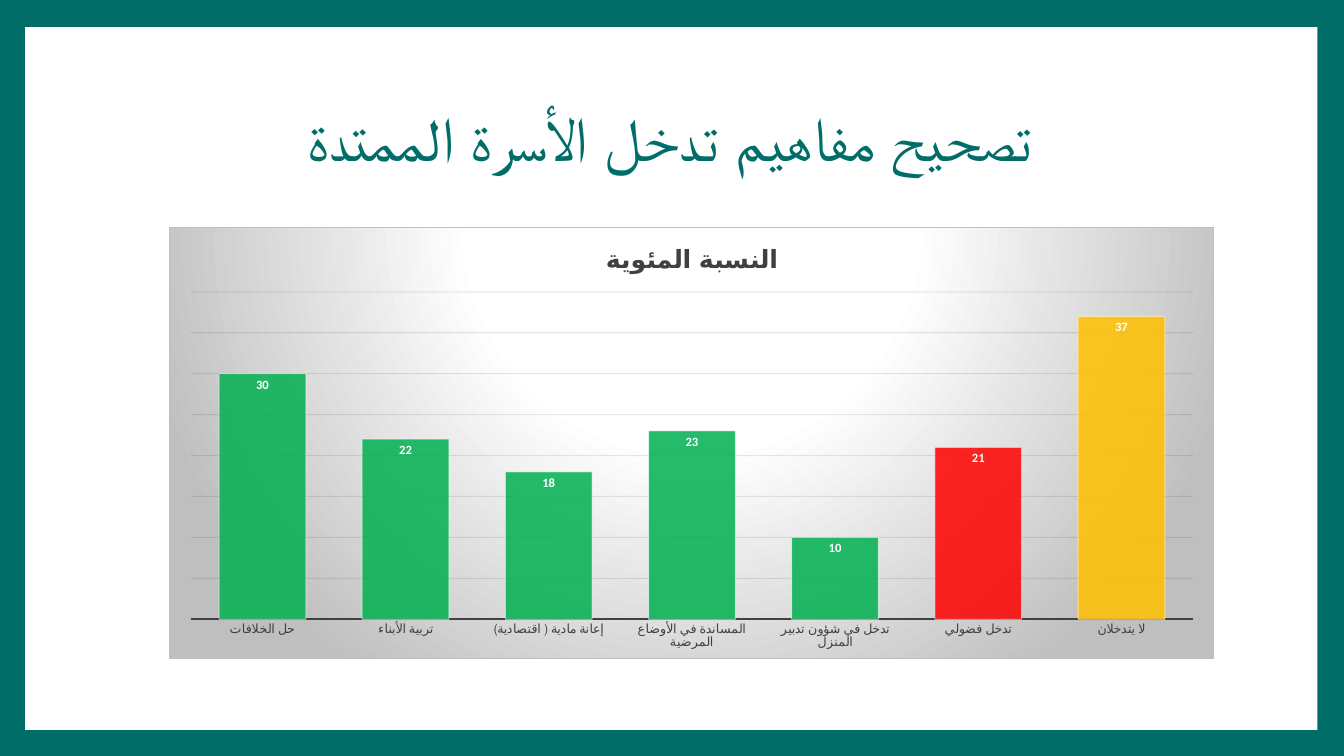
from dataclasses import dataclass
from typing import Any

from lxml import etree
from pptx import Presentation
from pptx.chart.data import CategoryChartData
from pptx.dml.color import RGBColor
from pptx.enum.chart import XL_CHART_TYPE, XL_LABEL_POSITION, XL_TICK_MARK
from pptx.enum.shapes import MSO_SHAPE
from pptx.enum.text import MSO_ANCHOR, PP_ALIGN
from pptx.oxml import parse_xml
from pptx.oxml.ns import qn
from pptx.util import Pt

COLUMNS = XL_CHART_TYPE.COLUMN_CLUSTERED
INSIDE_END = XL_LABEL_POSITION.INSIDE_END
NO_TICK = XL_TICK_MARK.NONE
RECTANGLE = MSO_SHAPE.RECTANGLE
MIDDLE = MSO_ANCHOR.MIDDLE
CENTER = PP_ALIGN.CENTER

COLORS = {
    "teal": "006D68", "white": "FFFFFF", "black": "000000",
    "dark": "404040", "grid": "0D0D0D", "silver": "BFBFBF",
    "green": "00B050", "red": "FF0000", "amber": "FFC000", "blue": "0989B1",
}
A_NS = "http://schemas.openxmlformats.org/drawingml/2006/main"
C_NS = "http://schemas.openxmlformats.org/drawingml/2006/chart"
NS = {"a": A_NS, "c": C_NS}
FILL = "c:spPr/a:solidFill/a:srgbClr"
LINE = "c:spPr/a:ln/a:solidFill/a:srgbClr"

HEADING = "تصحيح مفاهيم تدخل الأسرة الممتدة"
PERCENTAGE = "النسبة المئوية"


@dataclass(frozen=True)
class Intervention:
    label: str
    percent: int
    color: str = "green"


INTERVENTIONS = [
    Intervention("حل الخلافات", 30),
    Intervention("تربية الأبناء", 22),
    Intervention("إعانة مادية ( اقتصادية)", 18),
    Intervention("المساندة في الأوضاع المرضية", 23),
    Intervention("تدخل في شؤون تدبير المنزل", 10),
    Intervention("تدخل فضولي", 21, "red"),
    Intervention("لا يتدخلان", 37, "amber"),
]


def rgb(name: str) -> RGBColor:
    return RGBColor.from_string(COLORS[name])


def apply(target: Any, values: dict[str, Any]) -> None:
    for name, value in values.items():
        setattr(target, name, value)


def style_font(font: Any, color: str, size: float, bold: bool = False,
               name: str = "Calibri") -> None:
    apply(font, {"size": Pt(size), "bold": bold, "name": name})
    font.fill.solid()
    font.fill.fore_color.rgb = rgb(color)


def paint(fill: Any, color: str) -> None:
    fill.solid()
    fill.fore_color.rgb = rgb(color)


def paint_line(line: Any, color: str, width: float) -> None:
    paint(line.fill, color)
    line.width = Pt(width)


def set_opacity(element: Any, where: str, percent: int) -> None:
    color = element.find(where, NS)
    etree.SubElement(color, qn("a:alpha"), val=str(percent * 1000))


def style_column(bar_format: Any, color: str) -> None:
    paint(bar_format.fill, color)
    paint_line(bar_format.line, "white", 0.75)
    set_opacity(bar_format.element, FILL, 85)
    set_opacity(bar_format.element, LINE, 50)


def add_heading(slide: Any) -> None:
    box = slide.shapes.add_textbox(Pt(90), Pt(48), Pt(777.6), Pt(106.5))
    apply(box.text_frame, {"word_wrap": True, "vertical_anchor": MIDDLE})
    paragraph = box.text_frame.paragraphs[0]
    apply(paragraph, {"alignment": CENTER, "line_spacing": 0.9})
    run = paragraph.add_run()
    run.text = HEADING
    style_font(run.font, "teal", 44, name="Arial")
    # Right-to-left direction and the Arabic typeface
    box.element.find(".//a:pPr", NS).set("rtl", "1")
    etree.SubElement(box.element.find(".//a:rPr", NS), qn("a:cs"), typeface="Arial")


def add_backdrop(chart: Any) -> None:
    stops = "".join(
        f'<a:gs pos="{place * 1000}"><a:srgbClr val="{COLORS[color]}"/></a:gs>'
        for place, color in ((0, "white"), (39, "white"), (100, "silver")))
    backdrop = parse_xml(
        f'<c:spPr xmlns:c="{C_NS}" xmlns:a="{A_NS}"><a:gradFill><a:gsLst>{stops}</a:gsLst>'
        '<a:path path="circle"><a:fillToRect l="50000" t="-80000" r="50000" b="180000"/>'
        '</a:path></a:gradFill><a:ln w="9525"><a:solidFill>'
        f'<a:srgbClr val="{COLORS["silver"]}"/></a:solidFill></a:ln></c:spPr>')
    chart.element.find(qn("c:chart")).addnext(backdrop)


def place_plot(chart: Any, **fractions: float) -> None:
    plot_area = chart.element.find("c:chart/c:plotArea", NS)
    for old in plot_area.findall(qn("c:layout")):
        plot_area.remove(old)
    layout = etree.Element(qn("c:layout"))
    manual = etree.SubElement(layout, qn("c:manualLayout"))
    settings = {"layoutTarget": "inner", "xMode": "edge", "yMode": "edge", **fractions}
    for tag, value in settings.items():
        etree.SubElement(manual, qn(f"c:{tag}"), val=str(value))
    plot_area.insert(0, layout)


def add_percentage_chart(slide: Any) -> None:
    data = CategoryChartData()
    data.categories = [item.label for item in INTERVENTIONS]
    data.add_series(PERCENTAGE, [item.percent for item in INTERVENTIONS])
    chart = slide.shapes.add_chart(
        COLUMNS, Pt(121), Pt(162), Pt(746.5), Pt(308.5), data).chart
    style_font(chart.font, "black", 10)
    apply(chart, {"has_legend": False, "has_title": True})

    # Chart title
    title = chart.chart_title
    title.include_in_layout = False
    title.text_frame.text = PERCENTAGE
    style_font(title.text_frame.paragraphs[0].runs[0].font, "dark", 18, True)

    # Axes
    categories, values = chart.category_axis, chart.value_axis
    apply(categories, {"major_tick_mark": NO_TICK, "minor_tick_mark": NO_TICK})
    style_font(categories.tick_labels.font, "dark", 9)
    paint_line(categories.format.line, "dark", 1.5)
    apply(values, {"minimum_scale": 0, "maximum_scale": 40, "major_unit": 5,
                   "has_major_gridlines": True, "visible": False})
    grid = values.major_gridlines.format
    paint_line(grid.line, "grid", 0.75)
    set_opacity(grid.element, LINE, 10)

    # Columns and their values
    plot = chart.plots[0]
    apply(plot, {"gap_width": 65, "vary_by_categories": False})
    series = plot.series[0]
    style_column(series.format, "blue")
    for index, item in enumerate(INTERVENTIONS):
        style_column(series.points[index].format, item.color)
    labels = series.data_labels
    apply(labels, {"show_value": True, "position": INSIDE_END})
    style_font(labels.font, "white", 9, True)

    add_backdrop(chart)
    place_plot(chart, x=0.02, y=0.15, w=0.96, h=0.76)


def main() -> None:
    presentation = Presentation()
    apply(presentation, {"slide_width": Pt(960), "slide_height": Pt(540)})
    slide = presentation.slides.add_slide(presentation.slide_layouts[6])

    # Teal border around a white panel
    paint(slide.background.fill, "teal")
    panel = slide.shapes.add_shape(RECTANGLE, Pt(18), Pt(19.3), Pt(923), Pt(502))
    panel.shadow.inherit = False
    paint(panel.fill, "white")
    panel.line.fill.background()

    add_heading(slide)
    add_percentage_chart(slide)
    presentation.save("out.pptx")


if __name__ == "__main__":
    main()
